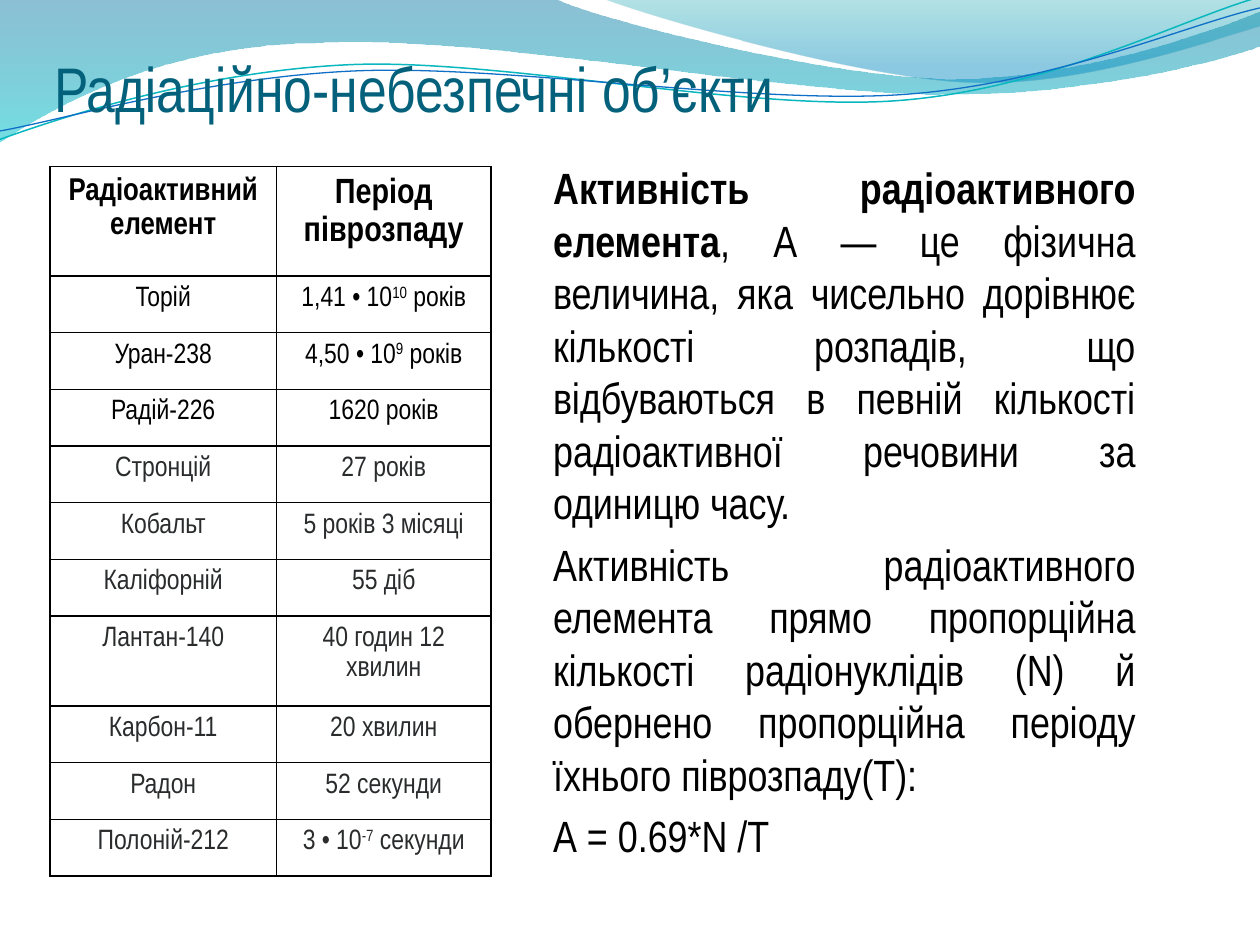
import pptx
import pptx.util
import pptx.dml.color
import pptx.enum.text
import pptx.oxml
import pptx.oxml.ns
import lxml.etree

Pt = pptx.util.Pt
RGBColor = pptx.dml.color.RGBColor
qn = pptx.oxml.ns.qn
ALIGN = pptx.enum.text.PP_ALIGN
ANCHOR = pptx.enum.text.MSO_ANCHOR

FONT = "Arial Narrow"
BLACK = RGBColor(0x00, 0x00, 0x00)
WHITE = RGBColor(0xFF, 0xFF, 0xFF)
GRAPHITE = RGBColor(0x29, 0x2B, 0x2C)
TITLE_TEAL = RGBColor(0x04, 0x61, 0x7B)
DEEP_BLUE = RGBColor(0x00, 0x74, 0xA0)
CYAN = RGBColor(0x00, 0xC4, 0xCD)
SKY_BLUE = RGBColor(0x00, 0x8A, 0xBF)
SEA_GREEN = RGBColor(0x00, 0xA0, 0xA8)
LINE_TEAL = RGBColor(0x09, 0xB7, 0xBF)
LINE_BLUE = RGBColor(0x0F, 0x6F, 0xC6)

presentation = pptx.Presentation()
presentation.slide_width = Pt(720)
presentation.slide_height = Pt(540)
slide = presentation.slides.add_slide(presentation.slide_layouts[6])


def add_text(paragraph, text, size, color=BLACK, bold=False):
    """Add runs to a paragraph; text between ^ marks is superscript."""
    for index, part in enumerate(text.split("^")):
        if not part:
            continue
        run = paragraph.add_run()
        run.text = part
        run.font.name = FONT
        run.font.size = Pt(size)
        run.font.bold = bold
        run.font.color.rgb = color
        if index % 2:
            run.font._element.set("baseline", "30000")


def add_wave(segments, closed):
    """Draw a path: 2 numbers are a line's end, 6 a Bezier curve's controls and end."""
    ends = [(Pt(segment[-2]), Pt(segment[-1])) for segment in segments]
    builder = slide.shapes.build_freeform(*ends[0])
    builder.add_line_segments(ends[1:], close=closed)
    shape = builder.convert_to_shape()
    shape.shadow.inherit = False
    # Bend the lines into curves by adding their control points
    lines = list(shape._element.iter(qn("a:lnTo")))
    for line, segment in zip(lines, segments[1:]):
        if len(segment) == 6:
            line.tag = qn("a:cubicBezTo")
            for index in (0, 1):
                x, y = segment[2 * index:2 * index + 2]
                control = lxml.etree.Element(qn("a:pt"), x=str(Pt(x) - shape.left),
                                             y=str(Pt(y) - shape.top))
                line.insert(index, control)
    return shape


# Gradient waves: path, angle, stops of position, colour and opacity
gradient_waves = [
    ([(0, 0), (317, -0.7), (343, 12, 478, 45, 546, 45), (614, 45, 690, 19, 720, 6.5),
      (720.7, 26), (708, 32, 626, 54.5, 537, 54), (447, 54, 275, 20, 185, 24.5),
      (93, 25, 33, 60, -0.7, 81.4)],
     270, [(0, DEEP_BLUE, 45), (1, CYAN, 55)]),
    ([(345, -0.7), (366, 8, 491, 45, 554, 47), (616, 50, 692, 23, 720, 15), (720, 0)],
     90, [(0.2, SKY_BLUE, 45), (1, SEA_GREEN, 30)]),
]
for segments, angle, stops in gradient_waves:
    wave = add_wave(segments, closed=True)
    wave.line.fill.background()
    wave.fill.gradient()
    wave.fill.gradient_angle = angle
    for stop, (position, color, opacity) in zip(wave.fill.gradient_stops, stops):
        stop.position = position
        stop.color.rgb = color
        alpha = lxml.etree.SubElement(stop._gs.find(qn("a:srgbClr")), qn("a:alpha"))
        alpha.set("val", str(opacity * 1000))

# Thin wave lines
wave_lines = [
    ([(-1, 80), (35, 67, 114, 41, 199, 37), (284, 33, 427, 64, 513, 57.5),
      (600, 51, 675, 11, 719, -1.5)], LINE_TEAL, 0.85),
    ([(-1, 75), (34, 69, 118, 44, 204, 40.5), (290, 37, 430, 60, 516, 54),
      (602, 48, 678, 14, 720, 4.5)], LINE_BLUE, 0.75),
]
for segments, color, width in wave_lines:
    wave = add_wave(segments, closed=False)
    wave.fill.background()
    wave.line.color.rgb = color
    wave.line.width = Pt(width)

# Title
title = slide.shapes.add_textbox(Pt(31), Pt(26), Pt(648), Pt(45.4)).text_frame
title.word_wrap = True
title.vertical_anchor = ANCHOR.BOTTOM
title.margin_left = title.margin_right = title.margin_bottom = 0
add_text(title.paragraphs[0], "Радіаційно-небезпечні об’єкти", size=36, color=TITLE_TEAL)

# Half-life table
half_lives = [
    ("Радіоактивний елемент", "Період піврозпаду"),
    ("Торій", "1,41 • 10^10^ років"),
    ("Уран-238", "4,50 • 10^9^ років"),
    ("Радій-226", "1620 років"),
    ("Стронцій", "27 років"),
    ("Кобальт", "5 років 3 місяці"),
    ("Каліфорній", "55 діб"),
    ("Лантан-140", "40 годин 12 хвилин"),
    ("Карбон-11", "20 хвилин"),
    ("Радон", "52 секунди"),
    ("Полоній-212", "3 • 10^-7^ секунди"),
]
table = slide.shapes.add_table(len(half_lives), 2, Pt(28.5), Pt(95.2),
                               Pt(252), Pt(378.4)).table
table.first_row = table.horz_banding = False
table.columns[0].width = Pt(129.6)
table.columns[1].width = Pt(122.4)
for row_index, row in enumerate(half_lives):
    table.rows[row_index].height = Pt(32.4 if row_index else 54.4)
    for column_index, text in enumerate(row):
        cell = table.cell(row_index, column_index)
        cell.fill.solid()
        cell.fill.fore_color.rgb = WHITE
        paragraph = cell.text_frame.paragraphs[0]
        paragraph.alignment = ALIGN.CENTER
        paragraph.line_spacing = 1.15
        paragraph.space_after = Pt(10)
        header = row_index == 0
        add_text(paragraph, text, size=(18, 20)[column_index] if header else 16,
                 color=BLACK if row_index < 4 else GRAPHITE, bold=header)
        properties = cell._tc.get_or_add_tcPr()
        for index, side in enumerate(("lnL", "lnR", "lnT", "lnB")):
            border = lxml.etree.Element(qn("a:" + side), w=str(Pt(0.96)))
            fill = lxml.etree.SubElement(border, qn("a:solidFill"))
            lxml.etree.SubElement(fill, qn("a:srgbClr"), val=str(BLACK))
            properties.insert(index, border)

# Explanation of activity: runs of text and boldness, alignment
explanation = [
    ([("Активність радіоактивного елемента", True),
      (", А — це фізична величина, яка чисельно дорівнює кількості розпадів, що "
       "відбуваються в певній кількості радіоактивної речовини за одиницю часу.", False)],
     ALIGN.JUSTIFY),
    ([("Активність радіоактивного елемента прямо пропорційна кількості радіонуклідів (N) "
       "й обернено пропорційна періоду їхнього піврозпаду(T):", False)], ALIGN.JUSTIFY),
    ([("А = 0.69*N /T", False)], ALIGN.LEFT),
]
body = slide.shapes.add_textbox(Pt(309), Pt(88.6), Pt(347), Pt(390)).text_frame
body.word_wrap = True
for index, (runs, alignment) in enumerate(explanation):
    paragraph = body.add_paragraph() if index else body.paragraphs[0]
    paragraph.alignment = alignment
    if index:
        paragraph.space_before = Pt(5)
    for text, bold in runs:
        add_text(paragraph, text, size=25, bold=bold)

presentation.save("out.pptx")
